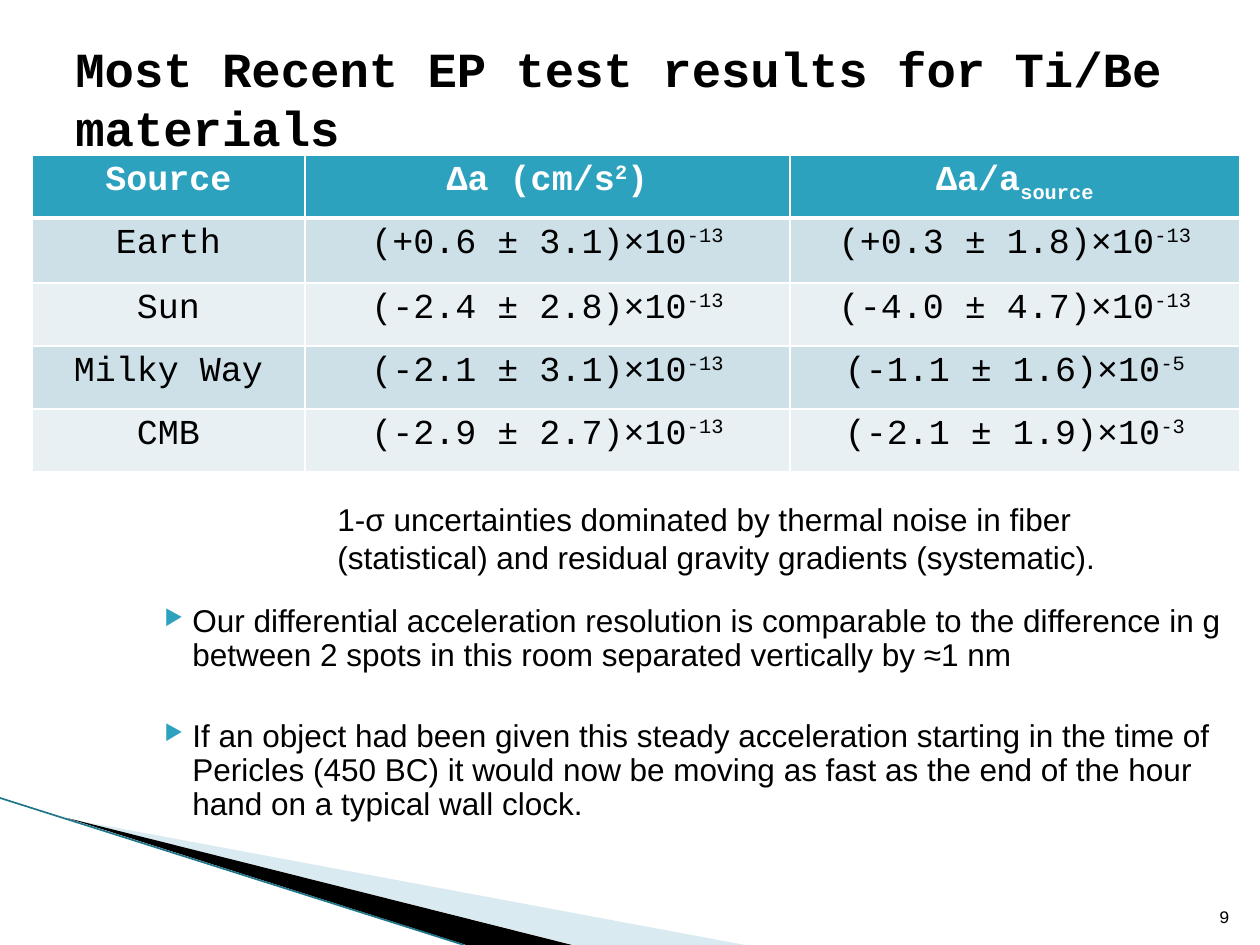
from lxml import etree
from pptx import Presentation
from pptx.dml.color import RGBColor
from pptx.enum.shapes import MSO_CONNECTOR
from pptx.enum.text import MSO_ANCHOR, PP_ALIGN
from pptx.oxml.ns import qn
from pptx.util import Emu, Pt

STRAIGHT = MSO_CONNECTOR.STRAIGHT
LEFT, CENTER, RIGHT = PP_ALIGN.LEFT, PP_ALIGN.CENTER, PP_ALIGN.RIGHT
TOP, BOTTOM = MSO_ANCHOR.TOP, MSO_ANCHOR.BOTTOM

EMU_PER_PX = 914400 / 126
MONO, SANS = "Courier New", "Arial"
TEAL, BLACK, WHITE = "2DA2BF", "000000", "FFFFFF"
BANDS = ["CDE0E8", "E8F0F4"]
SUPER, SUB = 30, -25

COLUMN_WIDTHS = [273, 485, 450]
ROW_HEIGHTS = [63, 65, 63, 63, 63]
HEADERS = [
    [("Source", 0)],
    [("Δa (cm/s", 0), ("2", SUPER), (")", 0)],
    [("Δa/a", 0), ("source", SUB)],
]
# Source, then mantissa and exponent of each measured value
RESULTS = [
    ("Earth", ("+0.6 ± 3.1", "-13"), ("+0.3 ± 1.8", "-13")),
    ("Sun", ("-2.4 ± 2.8", "-13"), ("-4.0 ± 4.7", "-13")),
    ("Milky Way", ("-2.1 ± 3.1", "-13"), ("-1.1 ± 1.6", "-5")),
    ("CMB", ("-2.9 ± 2.7", "-13"), ("-2.1 ± 1.9", "-3")),
]
BULLETS = [
    "Our differential acceleration resolution is comparable to the difference "
    "in g between 2 spots in this room separated vertically by ≈1 nm",
    "If an object had been given this steady acceleration starting in the time "
    "of Pericles (450 BC) it would now be moving as fast as the end of the hour "
    "hand on a typical wall clock.",
]


def px(*lengths):
    return [Emu(round(length * EMU_PER_PX)) for length in lengths]


def color(hex_string):
    return RGBColor.from_string(hex_string)


def set_font(para, name, size, hex_string=BLACK, bold=False):
    para.font.name, para.font.size, para.font.bold = name, Pt(size), bold
    para.font.color.rgb = color(hex_string)


def add_wedge(page, points, fill, alpha=100):
    builder = page.shapes.build_freeform(*points[0], scale=EMU_PER_PX)
    builder.add_line_segments(points[1:], close=True)
    wedge = builder.convert_to_shape()
    wedge.shadow.inherit = False
    wedge.line.fill.background()
    wedge.fill.solid()
    wedge.fill.fore_color.rgb = color(fill)
    if alpha < 100:
        tint = wedge.fill._xPr.find(".//" + qn("a:srgbClr"))
        etree.SubElement(tint, qn("a:alpha"), val=str(alpha * 1000))


def add_line(page, start, end, hex_string, width):
    line = page.shapes.add_connector(STRAIGHT, *px(*start, *end))
    line.line.color.rgb = color(hex_string)
    line.line.width = Pt(width)
    etree.SubElement(line._element.spPr, qn("a:effectLst"))


def add_text(page, area, texts, font, size, bold=False, align=LEFT, anchor=TOP):
    box = page.shapes.add_textbox(*px(*area))
    frame = box.text_frame
    frame.word_wrap = True
    frame.vertical_anchor = anchor
    frame.text = "\n".join(texts)
    for para in frame.paragraphs:
        para.alignment = align
        set_font(para, font, size, bold=bold)
    return frame


def add_bullet(para, symbol, hex_string, percent):
    indent, hanging = px(33, -28)
    props = para._p.get_or_add_pPr()
    props.set("marL", str(indent))
    props.set("indent", str(hanging))
    # Bullet settings stand between the spacing and the default run properties
    place = props.index(props.find(qn("a:defRPr")))
    tint = etree.Element(qn("a:buClr"))
    etree.SubElement(tint, qn("a:srgbClr"), val=hex_string)
    scale = etree.Element(qn("a:buSzPct"), val=str(percent * 1000))
    mark = etree.Element(qn("a:buChar"), char=symbol)
    props[place:place] = [tint, scale, mark]


def set_borders(cell, bottom_width):
    props = cell._tc.get_or_add_tcPr()
    for side, width in (("L", 1), ("R", 1), ("T", 1), ("B", bottom_width)):
        edge = etree.SubElement(props, qn("a:ln" + side), w=str(Pt(width)))
        fill = etree.SubElement(edge, qn("a:solidFill"))
        etree.SubElement(fill, qn("a:srgbClr"), val=WHITE)


def fill_cell(cell, parts, fill, header):
    set_borders(cell, 3 if header else 1)
    cell.fill.solid()
    cell.fill.fore_color.rgb = color(fill)
    para = cell.text_frame.paragraphs[0]
    para.alignment = CENTER
    set_font(para, MONO, 20, WHITE if header else BLACK, header)
    for text, baseline in parts:
        span = para.add_run()
        span.text = text
        if baseline:
            span.font._element.set("baseline", str(baseline * 1000))


def add_results_table(page, left, top):
    rows = [HEADERS]
    for source, *values in RESULTS:
        rows.append([[(source, 0)]] + [
            [(f"({value})×10", 0), (exponent, SUPER)] for value, exponent in values
        ])
    area = px(left, top, sum(COLUMN_WIDTHS), sum(ROW_HEIGHTS))
    table = page.shapes.add_table(len(rows), len(HEADERS), *area).table
    for column, width in zip(table.columns, px(*COLUMN_WIDTHS)):
        column.width = width
    for row, height in zip(table.rows, px(*ROW_HEIGHTS)):
        row.height = height
    for r, row in enumerate(rows):
        fill = BANDS[(r - 1) % 2] if r else TEAL
        for c, parts in enumerate(row):
            fill_cell(table.cell(r, c), parts, fill, r == 0)


def main():
    deck = Presentation()
    deck.slide_width, deck.slide_height = px(1260, 945)
    page = deck.slides.add_slide(deck.slide_layouts[6])

    # Corner decoration
    add_wedge(page, [(69, 819), (745, 945), (574, 945)], "A0CBDC", 40)
    add_wedge(page, [(67, 818), (572, 945), (466, 945)], BLACK)
    add_line(page, (0, 798), (464, 945), "1F7689", 0.95)

    # Results
    add_results_table(page, 32, 155)

    # Title, note and page number
    add_text(page, (63, 32, 1134, 72),
             ["Most Recent EP test results for Ti/Be materials"], MONO, 28, bold=True)
    add_text(page, (325, 494, 892, 89),
             ["1-σ uncertainties dominated by thermal noise in fiber (statistical) "
              "and residual gravity gradients (systematic)."], SANS, 18)
    add_text(page, (1192, 883, 50, 50), ["9"], MONO, 10, align=RIGHT, anchor=BOTTOM)

    # Comparisons
    frame = add_text(page, (147, 599, 1092, 231), BULLETS, SANS, 18)
    for para, gap in zip(frame.paragraphs, (4, 27)):
        para.line_spacing = 0.9
        para.space_before = Pt(gap)
        add_bullet(para, "▶", TEAL, 68)

    deck.save("out.pptx")


if __name__ == "__main__":
    main()
